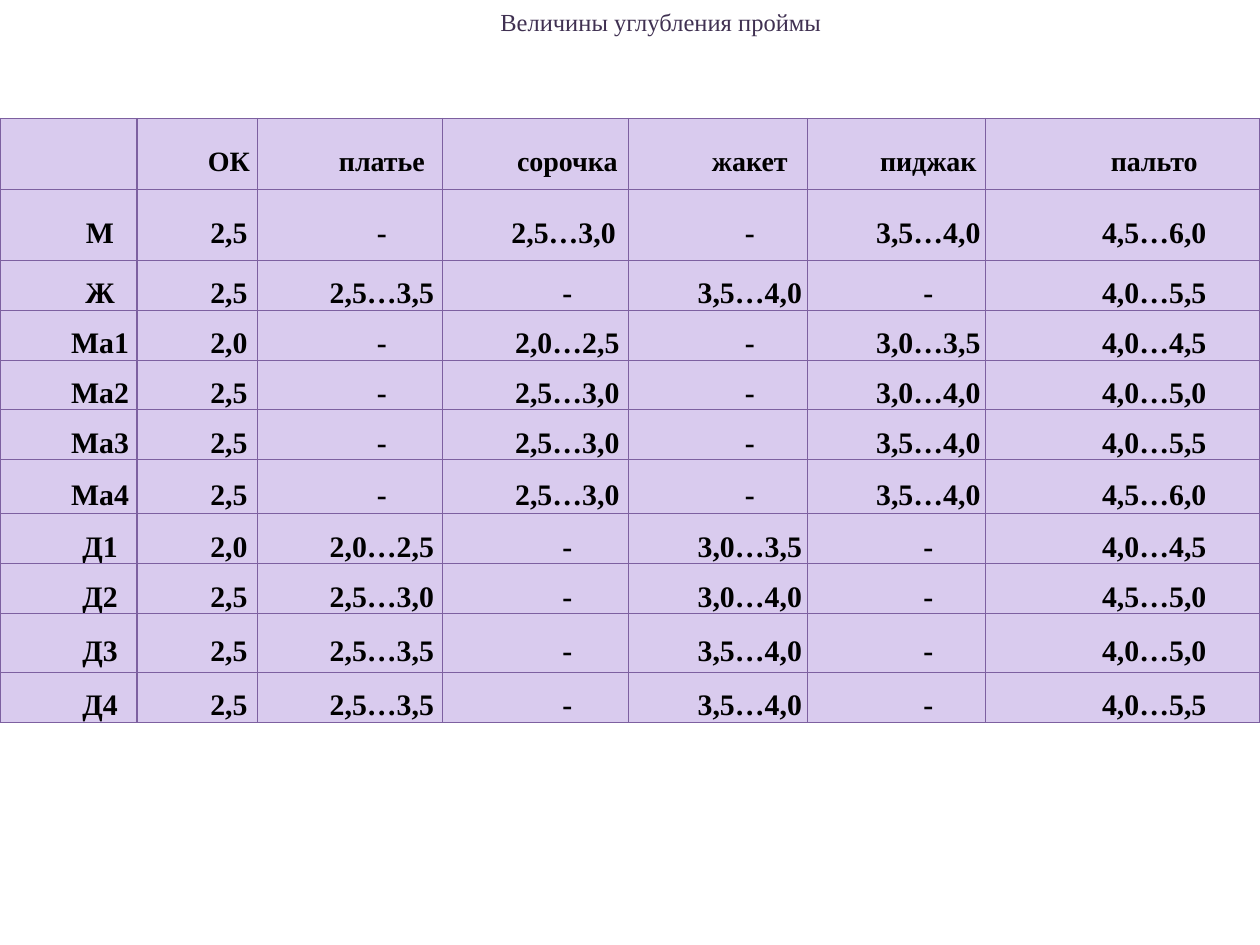
"""Build a slide with a table of armhole deepening values by garment type."""
from dataclasses import dataclass
from typing import Any

from lxml import etree
from pptx import Presentation
from pptx.dml.color import RGBColor
from pptx.enum.text import MSO_ANCHOR, MSO_AUTO_SIZE, PP_ALIGN
from pptx.oxml.ns import qn
from pptx.util import Length, Pt

MIDDLE = MSO_ANCHOR.MIDDLE
CENTER = PP_ALIGN.CENTER
FIT_SHAPE = MSO_AUTO_SIZE.SHAPE_TO_FIT_TEXT


@dataclass(frozen=True)
class Theme:
    font: str = "Times New Roman"
    title_color: str = "403152"
    text_color: str = "000000"
    fill_color: str = "D9CBEE"
    border_color: str = "7D60A0"
    border_width: Length = Pt(0.75)
    title_size: Length = Pt(14)
    header_size: Length = Pt(16)
    body_size: Length = Pt(17)


@dataclass(frozen=True)
class TextStyle:
    size: Length
    color: str
    bold: bool
    indent: Length
    line_spacing: float


THEME = Theme()
TITLE_STYLE = TextStyle(THEME.title_size, THEME.title_color, False, Pt(35.3), 1.0)
HEADER_STYLE = TextStyle(THEME.header_size, THEME.text_color, True, Pt(36), 1.5)
BODY_STYLE = TextStyle(THEME.body_size, THEME.text_color, True, Pt(36), 1.5)

SLIDE_WIDTH, SLIDE_HEIGHT = Pt(720), Pt(540)
TABLE_TOP, TABLE_HEIGHT = Pt(67.7), Pt(360.7)
COLUMN_WIDTHS = (78.3, 69.1, 105.7, 106.3, 102.3, 101.7, 156.6)
ROW_HEIGHTS = (40.7, 40.5, 22.3, 19.4, 28.1, 22.3, 31, 28.1, 28.1, 33.8, 22.3)
CELL_FORMAT = {
    "vertical_anchor": MIDDLE,
    "margin_left": Pt(3),
    "margin_right": Pt(3),
    "margin_top": Pt(0),
    "margin_bottom": Pt(0),
}
ROWS = (
    ("", "ОК", "платье", "сорочка", "жакет", "пиджак", "пальто"),
    ("М", "2,5", "-", "2,5…3,0 ", "-", "3,5…4,0", "4,5…6,0"),
    ("Ж", "2,5", "2,5…3,5", "-", "3,5…4,0", "-", "4,0…5,5"),
    ("Ма1", "2,0", "-", "2,0…2,5", "-", "3,0…3,5", "4,0…4,5"),
    ("Ма2", "2,5", "-", "2,5…3,0", "-", "3,0…4,0", "4,0…5,0"),
    ("Ма3", "2,5", "-", "2,5…3,0", "-", "3,5…4,0", "4,0…5,5"),
    ("Ма4", "2,5", "-", "2,5…3,0", "-", "3,5…4,0", "4,5…6,0"),
    ("Д1", "2,0", "2,0…2,5", "-", "3,0…3,5", "-", "4,0…4,5"),
    ("Д2", "2,5", "2,5…3,0", "-", "3,0…4,0", "-", "4,5…5,0"),
    ("Д3", "2,5", "2,5…3,5", "-", "3,5…4,0", "-", "4,0…5,0"),
    ("Д4", "2,5", "2,5…3,5", "-", "3,5…4,0", "-", "4,0…5,5"),
)


def apply_format(target: Any, values: dict[str, Any]) -> None:
    for name, value in values.items():
        setattr(target, name, value)


def write_text(paragraph: Any, text: str, style: TextStyle) -> None:
    apply_format(paragraph, {"alignment": CENTER, "line_spacing": style.line_spacing})
    apply_format(paragraph.font, {"size": style.size})
    properties = paragraph._p.get_or_add_pPr()
    properties.set("marL", "0")
    properties.set("indent", str(int(style.indent)))
    if text:
        run = paragraph.add_run()
        run.text = text
        apply_format(run.font, {"name": THEME.font, "size": style.size, "bold": style.bold})
        run.font.color.rgb = RGBColor.from_string(style.color)


def add_borders(cell: Any) -> None:
    properties = cell._tc.get_or_add_tcPr()
    for side in ("a:lnL", "a:lnR", "a:lnT", "a:lnB"):
        line = etree.SubElement(properties, qn(side), w=str(int(THEME.border_width)))
        fill = etree.SubElement(line, qn("a:solidFill"))
        etree.SubElement(fill, qn("a:srgbClr"), val=THEME.border_color)


def draw_cell(cell: Any, text: str, style: TextStyle) -> None:
    apply_format(cell, CELL_FORMAT)
    add_borders(cell)
    cell.fill.solid()
    cell.fill.fore_color.rgb = RGBColor.from_string(THEME.fill_color)
    write_text(cell.text_frame.paragraphs[0], text, style)


def draw_table(slide: Any) -> None:
    shape = slide.shapes.add_table(
        len(ROWS), len(COLUMN_WIDTHS), Pt(0), TABLE_TOP, SLIDE_WIDTH, TABLE_HEIGHT
    )
    table = shape.table
    apply_format(table, {"first_row": False, "horz_banding": False})
    for column, width in zip(table.columns, COLUMN_WIDTHS):
        column.width = Pt(width)
    for row, height in zip(table.rows, ROW_HEIGHTS):
        row.height = Pt(height)
    shape.height = TABLE_HEIGHT
    for row_index, values in enumerate(ROWS):
        style = BODY_STYLE if row_index else HEADER_STYLE
        for column_index, text in enumerate(values):
            draw_cell(table.cell(row_index, column_index), text, style)


def draw_title(slide: Any, text: str) -> None:
    shape = slide.shapes.add_textbox(Pt(0), Pt(0), SLIDE_WIDTH, Pt(24.5))
    frame_format = {"word_wrap": True, "auto_size": FIT_SHAPE, "vertical_anchor": MIDDLE}
    apply_format(shape.text_frame, frame_format)
    write_text(shape.text_frame.paragraphs[0], text, TITLE_STYLE)


def main() -> None:
    presentation = Presentation()
    apply_format(presentation, {"slide_width": SLIDE_WIDTH, "slide_height": SLIDE_HEIGHT})
    slide = presentation.slides.add_slide(presentation.slide_layouts[6])
    draw_table(slide)
    draw_title(slide, "Величины углубления проймы")
    presentation.save("out.pptx")


if __name__ == "__main__":
    main()
